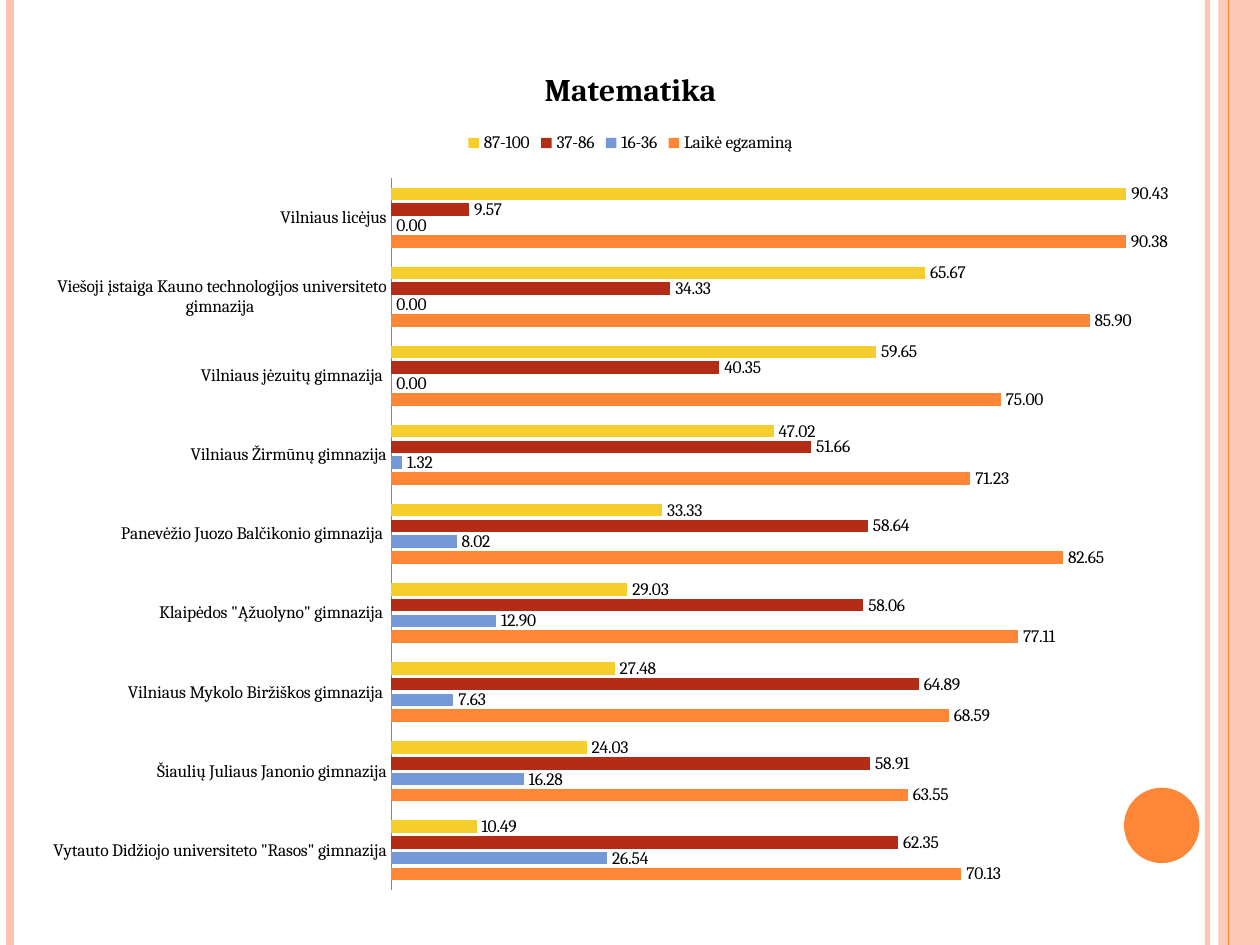
"""Builds the exam results slide: a clustered bar chart between striped margins."""
from dataclasses import dataclass

from lxml import etree
from pptx import Presentation
from pptx.chart.data import CategoryChartData
from pptx.dml.color import RGBColor
from pptx.enum.chart import XL_CHART_TYPE, XL_LABEL_POSITION, XL_LEGEND_POSITION, XL_TICK_MARK
from pptx.enum.shapes import MSO_CONNECTOR, MSO_SHAPE
from pptx.oxml import parse_xml
from pptx.oxml.ns import nsdecls, qn
from pptx.util import Cm, Pt

BAR_CLUSTERED = XL_CHART_TYPE.BAR_CLUSTERED
OUTSIDE_END = XL_LABEL_POSITION.OUTSIDE_END
LEGEND_TOP = XL_LEGEND_POSITION.TOP
NO_TICKS = XL_TICK_MARK.NONE
STRAIGHT = MSO_CONNECTOR.STRAIGHT
RECTANGLE, OVAL = MSO_SHAPE.RECTANGLE, MSO_SHAPE.OVAL

PAGE_WIDTH, PAGE_HEIGHT = 25.4, 19.05
FONT = "Cambria"
NUMBER_FORMAT = "0.00"
COLORS = {
    "orange": "FE8637",
    "peach": "FEC3AE",
    "blue": "7598D9",
    "red": "B32C16",
    "yellow": "F5CD2D",
    "axis": "868686",
    "text": "000000",
}


@dataclass
class Stripe:
    left: float
    color: str
    weight: float
    opacity: int = 100


@dataclass
class Block:
    kind: int
    left: float
    top: float
    width: float
    height: float
    color: str
    opacity: int = 100


@dataclass
class Result:
    name: str
    color: str
    values: tuple[float, ...]


STRIPES_BEHIND = (
    Stripe(24.34, "peach", 3, 93),
    Stripe(0.21, "peach", 4.5),
    Stripe(24.77, "orange", 0.75),
)
MARGIN = Block(RECTANGLE, 24.56, 0, 0.84, PAGE_HEIGHT, "peach", 87)
STRIPE_IN_FRONT = Stripe(24.77, "orange", 0.75)
DISC = Block(OVAL, 22.66, 15.88, 1.52, 1.52, "orange")

SCHOOLS = (
    'Vytauto Didžiojo universiteto "Rasos" gimnazija',
    " Šiaulių Juliaus Janonio gimnazija",
    "Vilniaus Mykolo Biržiškos gimnazija ",
    ' Klaipėdos "Ąžuolyno" gimnazija ',
    "Panevėžio Juozo Balčikonio gimnazija ",
    "Vilniaus Žirmūnų gimnazija",
    " Vilniaus jėzuitų gimnazija ",
    "Viešoji įstaiga Kauno technologijos universiteto gimnazija ",
    "Vilniaus licėjus",
)
RESULTS = (
    Result("Laikė egzaminą", "orange", (70.13, 63.55, 68.59, 77.11, 82.65, 71.23, 75, 85.9, 90.38)),
    Result("16-36", "blue", (26.54, 16.28, 7.63, 12.9, 8.02, 1.32, 0, 0, 0)),
    Result("37-86", "red", (62.35, 58.91, 64.89, 58.06, 58.64, 51.66, 40.35, 34.33, 9.57)),
    Result("87-100", "yellow", (10.49, 24.03, 27.48, 29.03, 33.33, 47.02, 59.65, 65.67, 90.43)),
)


def rgb(name: str) -> RGBColor:
    return RGBColor.from_string(COLORS[name])


def set_opacity(element, percent: int) -> None:
    if percent < 100:
        color = next(element.iter(qn("a:srgbClr")))
        etree.SubElement(color, qn("a:alpha")).set("val", str(percent * 1000))


def draw_stripe(page, stripe: Stripe) -> None:
    line = page.shapes.add_connector(STRAIGHT, Cm(stripe.left), 0, Cm(stripe.left), Cm(PAGE_HEIGHT))
    line.line.color.rgb = rgb(stripe.color)
    line.line.width = Pt(stripe.weight)
    properties = line._element.spPr
    set_opacity(properties, stripe.opacity)
    etree.SubElement(properties, qn("a:effectLst"))


def draw_block(page, block: Block) -> None:
    shape = page.shapes.add_shape(
        block.kind, Cm(block.left), Cm(block.top), Cm(block.width), Cm(block.height))
    shape.shadow.inherit = False
    shape.fill.solid()
    shape.fill.fore_color.rgb = rgb(block.color)
    shape.line.fill.background()
    set_opacity(shape._element.spPr, block.opacity)


def place_plot(chart, left: float, top: float, width: float, height: float) -> None:
    plot_area = chart._chartSpace.chart.plotArea
    for old in plot_area.findall(qn("c:layout")):
        plot_area.remove(old)
    plot_area.insert(0, parse_xml(
        f'<c:layout {nsdecls("c")}><c:manualLayout><c:layoutTarget val="inner"/>'
        f'<c:xMode val="edge"/><c:yMode val="edge"/><c:x val="{left}"/><c:y val="{top}"/>'
        f'<c:w val="{width}"/><c:h val="{height}"/></c:manualLayout></c:layout>'))


def format_axes(chart) -> None:
    schools, scores = chart.category_axis, chart.value_axis
    schools.major_tick_mark = NO_TICKS
    schools.format.line.color.rgb = rgb("axis")
    scores.minimum_scale, scores.maximum_scale = 0, 100
    scores.has_major_gridlines = False
    scores.tick_labels.number_format = NUMBER_FORMAT
    scores.tick_labels.number_format_is_linked = False
    scores.visible = False


def format_series(series, result: Result) -> None:
    series.format.fill.solid()
    series.format.fill.fore_color.rgb = rgb(result.color)
    labels = series.data_labels
    labels.show_value = True
    labels.number_format = NUMBER_FORMAT
    labels.number_format_is_linked = False
    labels.position = OUTSIDE_END


def draw_chart(page) -> None:
    data = CategoryChartData(number_format=NUMBER_FORMAT)
    data.categories = SCHOOLS
    for result in RESULTS:
        data.add_series(result.name, result.values)
    chart = page.shapes.add_chart(
        BAR_CLUSTERED, Cm(0.66), Cm(0.79), Cm(24.1), Cm(17.5), data).chart
    chart.font.name = FONT
    chart.font.size = Pt(10)
    chart.font.color.rgb = rgb("text")

    chart.has_title = True
    title = chart.chart_title.text_frame
    title.text = "Matematika"
    font = title.paragraphs[0].font
    font.name, font.size, font.bold = FONT, Pt(18), True
    font.color.rgb = rgb("text")
    chart.chart_title.include_in_layout = False

    chart.has_legend = True
    chart.legend.position = LEGEND_TOP
    chart.legend.include_in_layout = False

    plot = chart.plots[0]
    plot.vary_by_categories = False
    plot.gap_width, plot.overlap = 150, -25
    for series, result in zip(plot.series, RESULTS):
        format_series(series, result)
    format_axes(chart)
    place_plot(chart, 0.3, 0.16, 0.68, 0.82)


def main() -> None:
    deck = Presentation()
    deck.slide_width, deck.slide_height = Cm(PAGE_WIDTH), Cm(PAGE_HEIGHT)
    page = deck.slides.add_slide(deck.slide_layouts[6])
    for stripe in STRIPES_BEHIND:
        draw_stripe(page, stripe)
    draw_block(page, MARGIN)
    draw_stripe(page, STRIPE_IN_FRONT)
    draw_block(page, DISC)
    draw_chart(page)
    deck.save("out.pptx")


if __name__ == "__main__":
    main()
